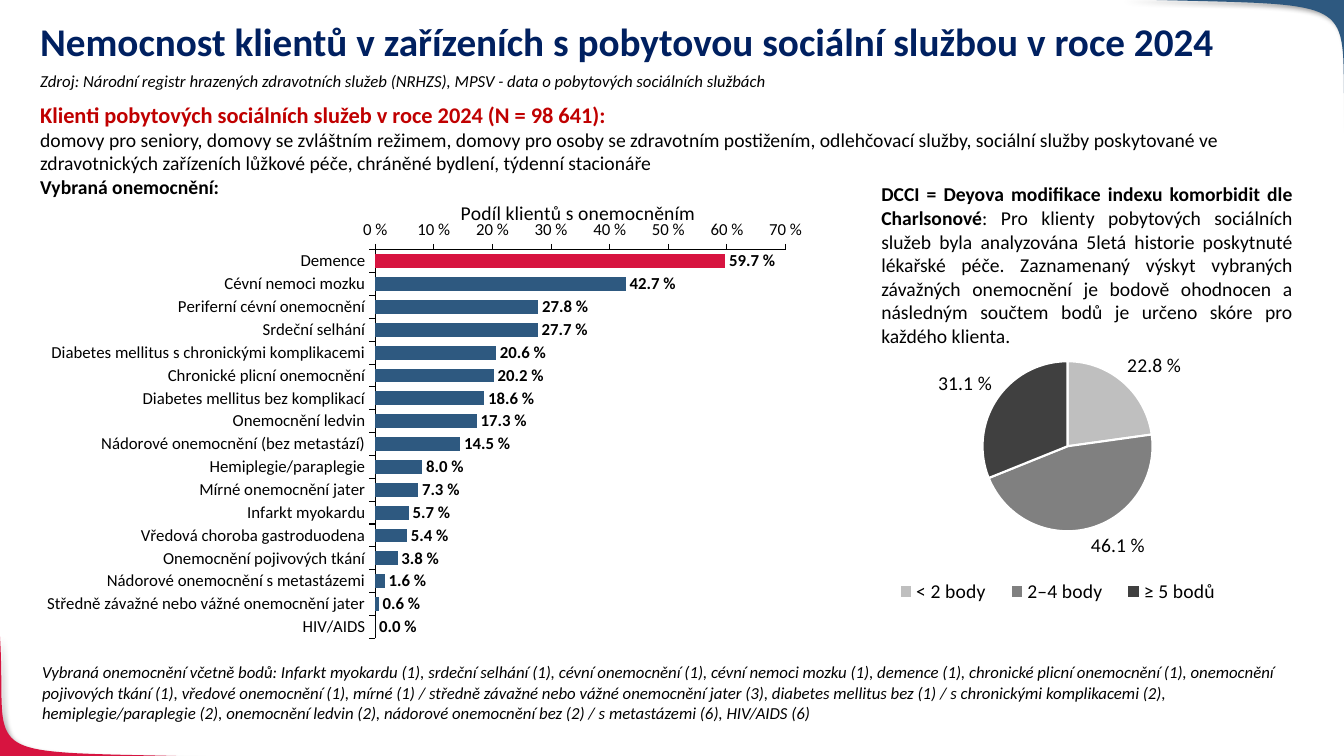
import lxml.etree
import pptx
import pptx.chart.data
import pptx.dml.color
import pptx.enum.chart
import pptx.enum.text
import pptx.oxml
import pptx.oxml.ns
import pptx.util

Pt = pptx.util.Pt
qn = pptx.oxml.ns.qn
XL = pptx.enum.chart
ALIGN = pptx.enum.text.PP_ALIGN


def colour(hex_string):
    return pptx.dml.color.RGBColor.from_string(hex_string)


def set_font(font, size, color, bold=False, italic=False):
    font.name = "Calibri"
    font.size = Pt(size)
    font.color.rgb = colour(color)
    font.bold = bold
    font.italic = italic


def run(text, size=14, color="000000", bold=False, italic=False):
    """Pair a run's text with its format."""
    return text, dict(size=size, color=color, bold=bold, italic=italic)


def curve(start, first, second, end, steps=40):
    """Points along a cubic Bézier curve."""
    for step in range(steps + 1):
        t = step / steps
        u = 1 - t
        yield tuple(
            u**3 * a + 3 * u * u * t * b + 3 * u * t * t * c + t**3 * d
            for a, b, c, d in zip(start, first, second, end)
        )


def manual_layout(parent, before, target=None, **fractions):
    """Fix the place of a chart part as fractions of the chart."""
    layout = parent.find(qn("c:layout"))
    if layout is None:
        layout = parent.makeelement(qn("c:layout"))
        anchor = parent.find(qn(before))
        anchor.addprevious(layout)
    manual = lxml.etree.SubElement(layout, qn("c:manualLayout"))
    settings = {"layoutTarget": target} if target else {}
    settings.update(xMode="edge", yMode="edge", **fractions)
    for tag, value in settings.items():
        lxml.etree.SubElement(manual, qn("c:" + tag)).set("val", str(value))


class SlideBuilder:
    ink = "000000"
    blue = "2E5980"
    red = "D71440"

    def __init__(self, slide):
        self.slide = slide

    def corner(self, bezier, tip, fill):
        """Curved corner ornament with a soft shadow."""
        points = [(Pt(x), Pt(y)) for x, y in [*curve(*bezier), tip]]
        builder = self.slide.shapes.build_freeform(*points[0], scale=1.0)
        builder.add_line_segments(points[1:], close=True)
        ornament = builder.convert_to_shape()
        ornament.fill.solid()
        ornament.fill.fore_color.rgb = colour(fill)
        ornament.line.fill.background()
        ornament.shadow.inherit = False
        effects = ornament.fill._xPr.find(qn("a:effectLst"))
        shadow = lxml.etree.SubElement(
            effects, qn("a:outerShdw"), blurRad=str(Pt(4)), dist=str(Pt(3)),
            dir=str(45 * 60000), algn="tl", rotWithShape="0")
        tint = lxml.etree.SubElement(shadow, qn("a:srgbClr"), val=self.ink)
        lxml.etree.SubElement(tint, qn("a:alpha"), val="40000")

    def text(self, box, *paragraphs, align=ALIGN.LEFT, spacing=None):
        frame = self.slide.shapes.add_textbox(*map(Pt, box)).text_frame
        frame.word_wrap = True
        for index, runs in enumerate(paragraphs):
            paragraph = frame.add_paragraph() if index else frame.paragraphs[0]
            paragraph.alignment = align
            paragraph.line_spacing = spacing
            for words, style in runs:
                piece = paragraph.add_run()
                piece.text = words
                set_font(piece.font, **style)

    def chart(self, kind, box, shares, name, point_fills, label_size, bold=False):
        """Chart of one series with outside percentage labels."""
        data = pptx.chart.data.CategoryChartData(number_format="0.0\\ %")
        data.categories = list(shares)
        data.add_series(name, [round(percent / 100, 3) for percent in shares.values()])
        chart = self.slide.shapes.add_chart(kind, *map(Pt, box), data).chart
        set_font(chart.font, label_size, self.ink)
        chart.has_title = False
        chart.has_legend = False
        plot = chart.plots[0]
        plot.has_data_labels = True
        labels = plot.data_labels
        labels.show_value = True
        labels.show_percentage = False
        labels.number_format = "0.0\\ %"
        labels.number_format_is_linked = False
        labels.position = XL.XL_LABEL_POSITION.OUTSIDE_END
        set_font(labels.font, label_size, self.ink, bold=bold)
        for index, fill in enumerate(point_fills):
            point = plot.series[0].points[index].format
            point.fill.solid()
            point.fill.fore_color.rgb = colour(fill)
        return chart

    def bars(self, box, shares, title):
        chart = self.chart(XL.XL_CHART_TYPE.BAR_CLUSTERED, box, shares, title,
                           [self.red], 12, bold=True)
        plot = chart.plots[0]
        plot.gap_width = 65
        plot.vary_by_categories = False
        series = plot.series[0]
        series.invert_if_negative = False
        series.format.fill.solid()
        series.format.fill.fore_color.rgb = colour(self.blue)

        heading = chart.chart_title.text_frame.paragraphs[0].add_run()
        heading.text = title
        set_font(heading.font, 14, self.ink)
        manual_layout(chart.chart_title._element, "c:overlay", x=0.54, y=0.026)
        manual_layout(chart._chartSpace.chart.plotArea, "c:barChart", "inner",
                      x=0.437, y=0.142, w=0.516, h=0.831)

        for axis in (chart.category_axis, chart.value_axis):
            axis.has_major_gridlines = False
            axis.major_tick_mark = XL.XL_TICK_MARK.OUTSIDE
            axis.minor_tick_mark = XL.XL_TICK_MARK.NONE
            axis.format.line.color.rgb = colour(self.ink)
            axis.format.line.width = Pt(0.75)
            set_font(axis.tick_labels.font, 12, self.ink)
        chart.category_axis.reverse_order = True
        scale = chart.value_axis
        scale.minimum_scale, scale.maximum_scale, scale.major_unit = 0, 0.7, 0.1
        scale.tick_labels.number_format = "0\\ %"
        scale.tick_labels.number_format_is_linked = False

    def pie(self, box, shares, name, fills):
        chart = self.chart(XL.XL_CHART_TYPE.PIE, box, shares, name, fills, 14)
        plot = chart.plots[0]
        plot.vary_by_categories = True
        for index in range(len(fills)):
            edge = plot.series[0].points[index].format.line
            edge.color.rgb = colour("FFFFFF")
            edge.width = Pt(1.5)
        chart.has_legend = True
        chart.legend.position = XL.XL_LEGEND_POSITION.BOTTOM
        chart.legend.include_in_layout = False
        set_font(chart.legend.font, 14, self.ink)
        manual_layout(chart.legend._element, "c:overlay", x=0.15, y=0.87, w=0.68, h=0.11)


DISEASES = {
    "Demence": 59.7, "Cévní nemoci mozku": 42.7, "Periferní cévní onemocnění": 27.8,
    "Srdeční selhání": 27.7, "Diabetes mellitus s chronickými komplikacemi": 20.6,
    "Chronické plicní onemocnění": 20.2, "Diabetes mellitus bez komplikací": 18.6,
    "Onemocnění ledvin": 17.3, "Nádorové onemocnění (bez metastází)": 14.5,
    "Hemiplegie/paraplegie": 8.0, "Mírné onemocnění jater": 7.3,
    "Infarkt myokardu": 5.7, "Vředová choroba gastroduodena": 5.4,
    "Onemocnění pojivových tkání": 3.8, "Nádorové onemocnění s metastázemi": 1.6,
    "Středně závažné nebo vážné onemocnění jater": 0.6, "HIV/AIDS": 0.0,
}
DCCI_SCORES = {"< 2 body": 22.8, "2–4 body": 46.1, "≥ 5 bodů": 31.1}


def main():
    deck = pptx.Presentation()
    deck.slide_width, deck.slide_height = Pt(960), Pt(540)
    page = SlideBuilder(deck.slides.add_slide(deck.slide_layouts[6]))

    page.corner([(153.4, 540.7), (-24.5, 535.7), (5.8, 546.5), (0, 453.6)],
                (-0.7, 540.7), page.red)
    page.corner([(799.9, -0.7), (986.4, 5), (954.7, -7.2), (961.2, 102.2)],
                (961.2, -0.7), page.blue)
    page.bars((19.8, 131, 568.1, 334.1), DISEASES, "Podíl klientů s onemocněním")
    page.text((21.6, 12.4, 908.6, 42.5),
              [run("Nemocnost klientů v zařízeních s pobytovou sociální službou v roce 2024",
                   size=28, color="002060", bold=True)],
              spacing=0.9)
    page.text((622.4, 126.7, 308.2, 126),
              [run("DCCI = Deyova modifikace indexu komorbidit dle Charlsonové", bold=True),
               run(": Pro klienty pobytových sociálních služeb byla analyzována 5letá historie "
                   "poskytnuté lékařské péče. Zaznamenaný výskyt vybraných závažných onemocnění "
                   "je bodově ohodnocen a následným součtem bodů je určeno skóre pro každého "
                   "klienta.")],
              align=ALIGN.JUSTIFY)
    page.text((23, 469.4, 918.7, 51.1),
              [run("Vybraná onemocnění včetně bodů: Infarkt myokardu (1), srdeční selhání (1), "
                   "cévní onemocnění (1), cévní nemoci mozku (1), demence (1), chronické plicní "
                   "onemocnění (1), onemocnění pojivových tkání (1), vředové onemocnění (1), "
                   "mírné (1) / středně závažné nebo vážné onemocnění jater (3), diabetes "
                   "mellitus bez (1) / s chronickými komplikacemi (2), hemiplegie/paraplegie (2), "
                   "onemocnění ledvin (2), nádorové onemocnění bez (2) / s metastázemi (6), "
                   "HIV/AIDS (6)", size=12, italic=True)])
    page.text((21.6, 68.4, 908.6, 77.8),
              [run("Klienti pobytových sociálních služeb v roce 2024 (N = 98 641):",
                   size=16, color="C00000", bold=True)],
              [run("domovy pro seniory, domovy se zvláštním režimem, domovy pro osoby se "
                   "zdravotním postižením, odlehčovací služby, sociální služby poskytované ve "
                   "zdravotnických zařízeních lůžkové péče, chráněné bydlení, týdenní stacionáře")],
              [run("Vybraná onemocnění:", bold=True)])
    page.pie((573.8, 236.2, 370.8, 201.6), DCCI_SCORES, "DCCI",
             ["BFBFBF", "808080", "404040"])
    page.text((21.6, 46.8, 819.4, 21.6),
              [run("Zdroj: Národní registr hrazených zdravotních služeb (NRHZS), MPSV - data "
                   "o pobytových sociálních službách", size=12, italic=True)])
    deck.save("out.pptx")


if __name__ == "__main__":
    main()
